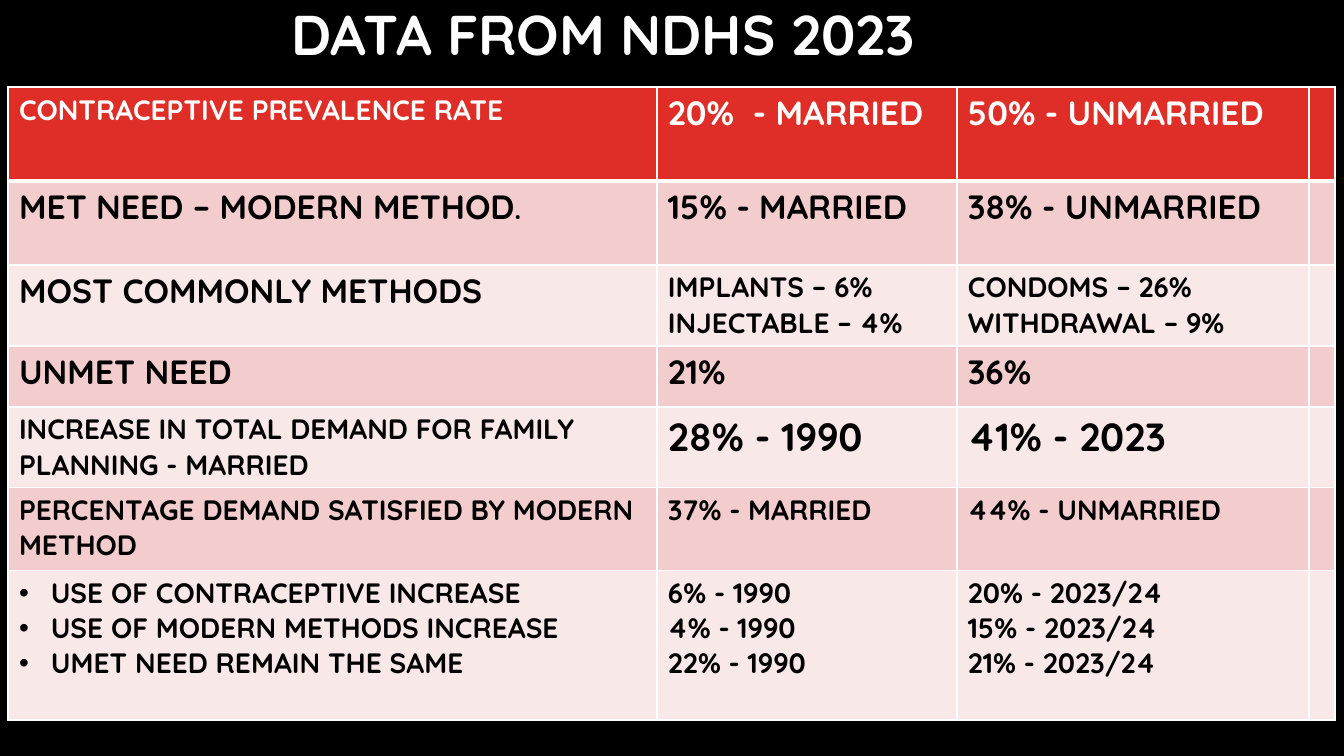
"""Build the NDHS 2023 family planning data slide."""
from dataclasses import dataclass
from typing import NamedTuple

from lxml import etree
from pptx import Presentation
from pptx import util as u
from pptx.dml import color
from pptx.enum import text
from pptx.oxml import ns


@dataclass(frozen=True)
class Theme:
    font: str = "Quicksand"
    back: str = "000000"
    ink: str = "000000"
    white: str = "FFFFFF"
    head: str = "DF2E28"
    bands: tuple[str, str] = ("F9E8E8", "F3CDCD")
    title: int = 40
    small: int = 20
    large: int = 24
    huge: int = 28
    thin: int = 1
    thick: int = 3


class Run(NamedTuple):
    text: str
    size: int


class Cell(NamedTuple):
    lines: list[list[Run]]
    bullet: bool = False


class Row(NamedTuple):
    high: int
    cells: list[Cell]


T = Theme()
COLS = [649, 300, 352, 26]


def px(n: int) -> int:
    return round(n * 12192000 / 1344)


def cell(size: int, *lines: str, bullet: bool = False) -> Cell:
    return Cell([[Run(line, size)] for line in lines], bullet)


ROWS = [
    Row(94, [cell(T.small, "CONTRACEPTIVE PREVALENCE RATE"),
             cell(T.large, "20%  - MARRIED"),
             cell(T.large, "50% - UNMARRIED")]),
    Row(84, [Cell([[Run("MET NEED – MODERN METHOD", T.large), Run(".", T.small)]]),
             cell(T.large, "15% - MARRIED"),
             cell(T.large, "38% - UNMARRIED")]),
    Row(81, [cell(T.large, "MOST COMMONLY METHODS"),
             cell(T.small, "IMPLANTS – 6%", "INJECTABLE – 4%"),
             cell(T.small, "CONDOMS – 26%", "WITHDRAWAL – 9%")]),
    Row(61, [cell(T.large, "UNMET NEED"),
             cell(T.large, "21%"),
             cell(T.large, "36%")]),
    Row(80, [cell(T.small, "INCREASE IN TOTAL DEMAND FOR FAMILY PLANNING - MARRIED"),
             cell(T.huge, "28% - 1990"),
             cell(T.huge, "41% - 2023")]),
    Row(83, [cell(T.small, "PERCENTAGE DEMAND SATISFIED BY MODERN METHOD"),
             cell(T.small, "37% - MARRIED"),
             cell(T.small, "44% - UNMARRIED")]),
    Row(150, [cell(T.small, "USE OF CONTRACEPTIVE INCREASE",
                   "USE OF MODERN METHODS INCREASE",
                   "UMET NEED REMAIN THE SAME", bullet=True),
              cell(T.small, "6% - 1990", "4% - 1990", "22% - 1990"),
              cell(T.small, "20% - 2023/24", "15% - 2023/24", "21% - 2023/24")]),
]


def rgb(tone: str) -> color.RGBColor:
    return color.RGBColor.from_string(tone)


def write(para, item: Run, tone: str) -> None:
    run = para.add_run()
    run.text = item.text
    run.font.name = T.font
    run.font.size = u.Pt(item.size)
    run.font.bold = True
    run.font.color.rgb = rgb(tone)


def mark(para) -> None:
    props = para._p.get_or_add_pPr()
    props.set("marL", str(px(32)))
    props.set("indent", str(-px(32)))
    font = etree.SubElement(props, ns.qn("a:buFont"))
    font.set("typeface", "Arial")
    etree.SubElement(props, ns.qn("a:buChar")).set("char", "•")


def edge(box, side: str, width: int) -> None:
    line = etree.SubElement(box._tc.get_or_add_tcPr(), ns.qn(f"a:ln{side}"))
    line.set("w", str(u.Pt(width)))
    fill = etree.SubElement(line, ns.qn("a:solidFill"))
    etree.SubElement(fill, ns.qn("a:srgbClr")).set("val", T.white)


def style(box, row: int) -> None:
    box.margin_left = box.margin_right = px(11)
    box.margin_top = box.margin_bottom = px(5)
    wide = {"T": row == 1, "B": row == 0}
    for side in "LRTB":
        edge(box, side, T.thick if wide.get(side) else T.thin)
    box.fill.solid()
    box.fill.fore_color.rgb = rgb(T.bands[row % 2] if row else T.head)


def fill(box, data: Cell, tone: str) -> None:
    frame = box.text_frame
    for i, line in enumerate(data.lines):
        para = frame.add_paragraph() if i else frame.paragraphs[0]
        if data.bullet:
            mark(para)
        for item in line:
            write(para, item, tone)


def head(slide) -> None:
    title = slide.shapes.title
    title.left, title.top = px(128), px(-4)
    title.width, title.height = px(950), px(82)
    frame = title.text_frame
    frame.word_wrap = True
    frame.auto_size = text.MSO_AUTO_SIZE.NONE
    frame.vertical_anchor = text.MSO_ANCHOR.MIDDLE
    para = frame.paragraphs[0]
    para.alignment = text.PP_ALIGN.CENTER
    para.line_spacing = 0.9
    write(para, Run("DATA FROM NDHS 2023", T.title), T.white)


def grid(slide) -> None:
    high = sum(row.high for row in ROWS)
    table = slide.shapes.add_table(len(ROWS), len(COLS), px(8), px(87),
                                   px(sum(COLS)), px(high)).table
    table.horz_banding = False
    for col, wide in zip(table.columns, COLS):
        col.width = px(wide)
    for r, row in enumerate(ROWS):
        table.rows[r].height = px(row.high)
        for c in range(len(COLS)):
            style(table.cell(r, c), r)
        for c, data in enumerate(row.cells):
            fill(table.cell(r, c), data, T.ink if r else T.white)


def main() -> None:
    deck = Presentation()
    deck.slide_width, deck.slide_height = px(1344), px(756)
    slide = deck.slides.add_slide(deck.slide_layouts[5])
    back = slide.background.fill
    back.solid()
    back.fore_color.rgb = rgb(T.back)
    head(slide)
    grid(slide)
    deck.save("out.pptx")


if __name__ == "__main__":
    main()
